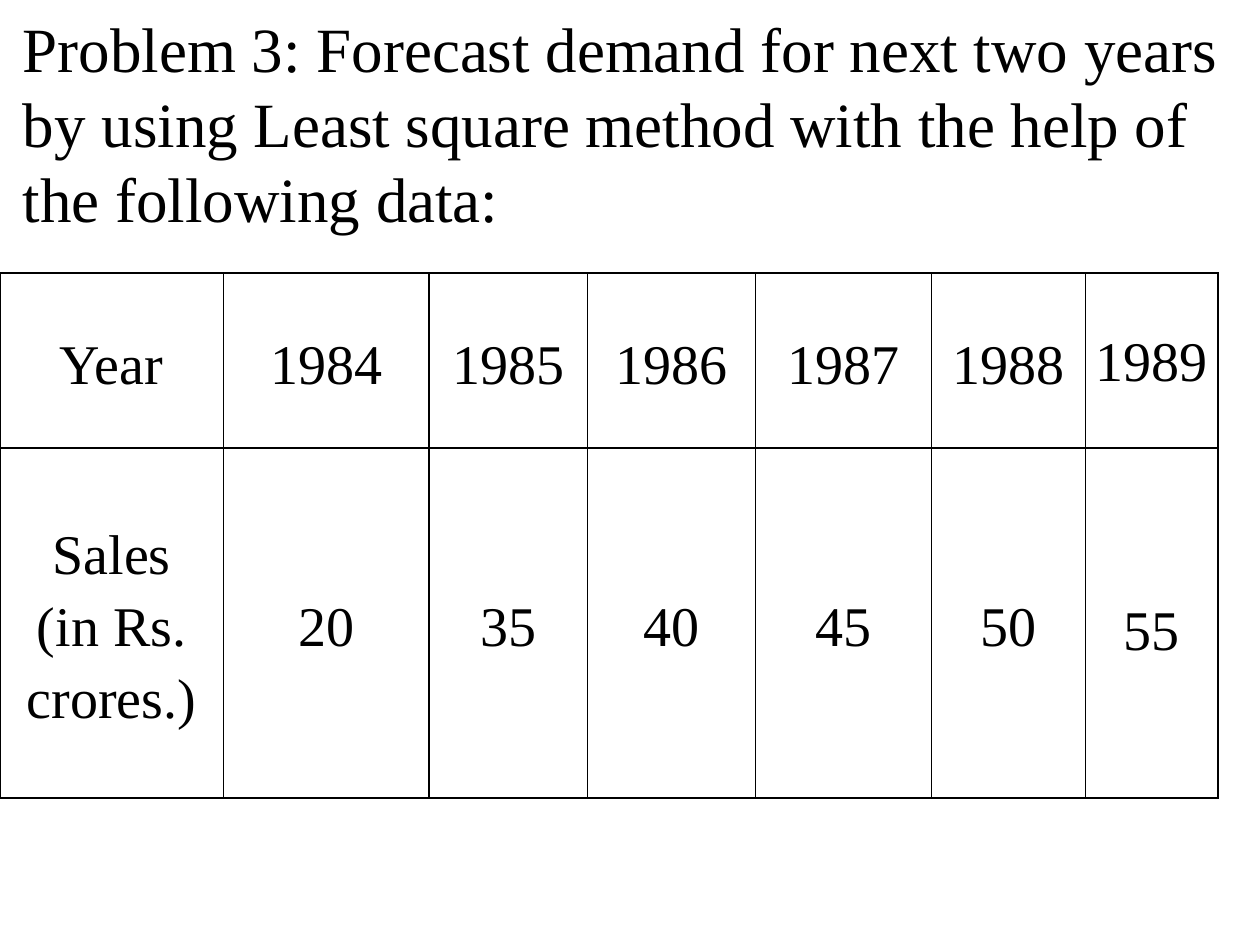
from dataclasses import dataclass

from lxml import etree
from pptx import Presentation
from pptx.dml.color import RGBColor
from pptx.enum.text import MSO_ANCHOR, MSO_AUTO_SIZE, PP_ALIGN
from pptx.oxml.ns import qn
from pptx.util import Pt

MIDDLE, TOP = MSO_ANCHOR.MIDDLE, MSO_ANCHOR.TOP
CENTER, LEFT = PP_ALIGN.CENTER, PP_ALIGN.LEFT
NO_FIT = MSO_AUTO_SIZE.NONE


@dataclass(frozen=True)
class Theme:
    font: str = "Times New Roman"
    ink: str = "000000"
    title_size: int = 36
    cell_size: int = 32
    border: int = 1


THEME = Theme()
TITLE = ("Problem 3: Forecast demand for next two years by using "
         "Least square method with the help of the following data:")
SALES_DATA = [
    ["Year", "1984", "1985", "1986", "1987", "1988", "1989"],
    ["Sales\n(in Rs. crores.)", "20", "35", "40", "45", "50", "55"],
]
COLUMN_WIDTHS = [127.5, 117.5, 90.5, 96, 100.5, 88, 75.5]
ROW_HEIGHTS = [100, 200]
LAST_COLUMN_DROPS = [28, 82]  # top margins of the top-anchored last column


def set_attrs(obj, values):
    for name, value in values.items():
        setattr(obj, name, value)


def write_text(tf, text, size, align, spacing):
    tf.text = text
    for p in tf.paragraphs:
        set_attrs(p, {"alignment": align, "line_spacing": spacing})
        for r in p.runs:
            set_attrs(r.font, {"name": THEME.font, "size": Pt(size)})
            r.font.color.rgb = RGBColor.from_string(THEME.ink)


def add_borders(cell):
    tc_pr = cell._tc.get_or_add_tcPr()
    for i, side in enumerate(("lnL", "lnR", "lnT", "lnB")):
        ln = etree.Element(qn(f"a:{side}"), w=str(Pt(THEME.border)))
        fill = etree.SubElement(ln, qn("a:solidFill"))
        etree.SubElement(fill, qn("a:srgbClr"), val=THEME.ink)
        tc_pr.insert(i, ln)


def add_title(s, x, y, w, h):
    tf = s.shapes.add_textbox(Pt(x), Pt(y), Pt(w), Pt(h)).text_frame
    # The deep bottom margin keeps the text clear of the table
    set_attrs(tf, {"word_wrap": True, "auto_size": NO_FIT,
                   "vertical_anchor": MIDDLE, "margin_bottom": Pt(45)})
    write_text(tf, TITLE, THEME.title_size, LEFT, Pt(43))


def add_sales_table(s, x, y, w, h):
    rows, cols = len(SALES_DATA), len(SALES_DATA[0])
    table = s.shapes.add_table(rows, cols, Pt(x), Pt(y), Pt(w), Pt(h)).table
    set_attrs(table, {"first_row": False, "horz_banding": False})
    for column, width in zip(table.columns, COLUMN_WIDTHS):
        column.width = Pt(w * width / sum(COLUMN_WIDTHS))
    for row, height in zip(table.rows, ROW_HEIGHTS):
        row.height = Pt(h * height / sum(ROW_HEIGHTS))

    # Cells
    for i, values in enumerate(SALES_DATA):
        for j, value in enumerate(values):
            cell = table.cell(i, j)
            last = j == cols - 1
            set_attrs(cell, {
                "margin_left": Pt(5), "margin_right": Pt(5),
                "margin_top": Pt(LAST_COLUMN_DROPS[i] if last else 0),
                "margin_bottom": Pt(0),
                "vertical_anchor": TOP if last else MIDDLE,
            })
            cell.fill.background()
            add_borders(cell)
            write_text(cell.text_frame, value, THEME.cell_size, CENTER, 1.15)


def main():
    prs = Presentation()
    set_attrs(prs, {"slide_width": Pt(720), "slide_height": Pt(540)})
    s = prs.slides.add_slide(prs.slide_layouts[6])
    add_sales_table(s, 0, 156, 696, 300)
    add_title(s, 6, 0, 708, 181.5)
    prs.save("out.pptx")


if __name__ == "__main__":
    main()
